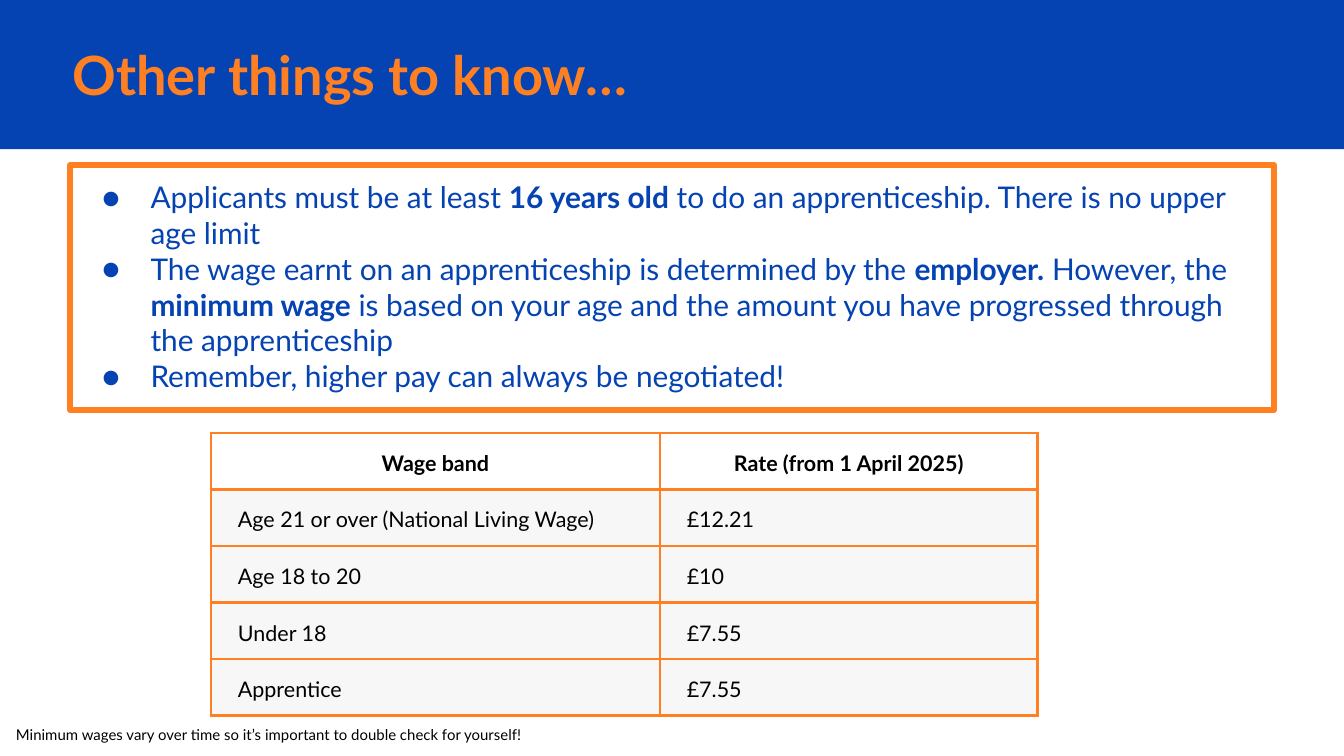
"""Build a slide on apprenticeship age limits and minimum wages."""
import pptx
import pptx.util
import pptx.dml.color
import pptx.enum.shapes
import pptx.enum.text
import pptx.oxml
import pptx.oxml.ns

Inches, Pt = pptx.util.Inches, pptx.util.Pt
ALIGN = pptx.enum.text.PP_ALIGN
ANCHOR = pptx.enum.text.MSO_ANCHOR

FONT = "Lato"
COLORS = {"blue": "0543B3", "orange": "FF8022", "black": "000000", "grey": "F7F7F7"}

TITLE = "Other things to know…"
POINTS = [
    "Applicants must be at least **16 years old** to do an apprenticeship. "
    "There is no upper age limit",
    "The wage earnt on an apprenticeship is determined by the **employer.** However, "
    "the **minimum wage** is based on your age and the amount you have progressed "
    "through the apprenticeship",
    "Remember, higher pay can always be negotiated!",
]
RATES = [
    ("Wage band", "Rate (from 1 April 2025)"),
    ("Age 21 or over (National Living Wage)", "£12.21"),
    ("Age 18 to 20", "£10"),
    ("Under 18", "£7.55"),
    ("Apprentice", "£7.55"),
]
NOTE = "Minimum wages vary over time so it’s important to double check for yourself!"
WIDTHS = (3.34, 2.81)
ROW = 0.42


def color(name):
    return pptx.dml.color.RGBColor.from_string(COLORS[name])


def box(left, top, width, height):
    return [Inches(n) for n in (left, top, width, height)]


def place(shape, *area):
    shape.left, shape.top, shape.width, shape.height = box(*area)


def add_xml(parent, tag, attrs="", inner=""):
    ns = pptx.oxml.ns.nsdecls("a")
    parent.append(pptx.oxml.parse_xml(f"<a:{tag} {ns} {attrs}>{inner}</a:{tag}>"))


def paint(name):
    return f'<a:srgbClr val="{COLORS[name]}"/>'


def write(frame, lines, size=16, tint="black", bold=False, align=ALIGN.LEFT,
          space=1.0, bullet=None):
    for i, line in enumerate(lines):
        para = frame.add_paragraph() if i else frame.paragraphs[0]
        para.alignment, para.line_spacing = align, space
        para.space_before = para.space_after = Pt(0)
        for j, part in enumerate(line.split("**")):
            run = para.add_run()
            run.text = part
            run.font.name, run.font.size = FONT, Pt(size)
            run.font.bold = bold or j % 2 == 1
            run.font.color.rgb = color(tint)
        if bullet:
            props = para._p.get_or_add_pPr()
            props.set("marL", str(Inches(0.5)))
            props.set("indent", str(Inches(-0.36)))
            add_xml(props, "buClr", inner=paint(tint))
            add_xml(props, "buFont", f'typeface="{FONT}"')
            add_xml(props, "buChar", f'char="{bullet}"')


def pad(frame, anchor=ANCHOR.TOP):
    frame.word_wrap, frame.vertical_anchor = True, anchor
    frame.auto_size = pptx.enum.text.MSO_AUTO_SIZE.NONE
    frame.margin_left = frame.margin_right = Inches(0.1)
    frame.margin_top = frame.margin_bottom = Inches(0.1)


def border(cell):
    props = cell._tc.get_or_add_tcPr()
    for side in "LRTB":
        add_xml(props, f"ln{side}", f'w="{Pt(1.5)}"',
                f'<a:solidFill>{paint("orange")}</a:solidFill>')


def fill_table(table):
    for col, width in zip(table.columns, WIDTHS):
        col.width = Inches(width)
    for r, row in enumerate(RATES):
        table.rows[r].height = Inches(ROW)
        for c, text in enumerate(row):
            cell = table.cell(r, c)
            cell.vertical_anchor = ANCHOR.MIDDLE
            cell.margin_left = cell.margin_right = Inches(0.2)
            cell.margin_top = cell.margin_bottom = Inches(0.1)
            border(cell)
            if r:
                cell.fill.solid()
                cell.fill.fore_color.rgb = color("grey")
            else:
                cell.fill.background()
            write(cell.text_frame, [text], size=11.5, bold=r == 0, space=1.15,
                  align=ALIGN.LEFT if r else ALIGN.CENTER)


def main():
    deck = pptx.Presentation()
    deck.slide_width = Inches(10)
    deck.slide_height = deck.slide_width * 9 // 16
    slide = deck.slides.add_slide(deck.slide_layouts[1])
    shapes = slide.shapes

    band = shapes.add_shape(pptx.enum.shapes.MSO_SHAPE.RECTANGLE, *box(0, 0, 10, 1.11))
    band.shadow.inherit = False
    band.fill.solid()
    band.fill.fore_color.rgb = color("blue")
    band.line.fill.background()
    shapes._spTree.insert(2, band._element)

    title = shapes.title
    place(title, 0.44, 0.21, 9.35, 0.68)
    pad(title.text_frame, ANCHOR.MIDDLE)
    write(title.text_frame, [TITLE], size=29, tint="orange", bold=True)

    body = slide.placeholders[1]
    place(body, 0.52, 1.23, 8.96, 1.82)
    body.line.color.rgb, body.line.width = color("orange"), Pt(3)
    pad(body.text_frame)
    write(body.text_frame, POINTS, tint="blue", bullet="●")

    note = shapes.add_textbox(*box(0.02, 5.3, 9.95, 0.34))
    pad(note.text_frame)
    write(note.text_frame, [NOTE], size=8)

    area = box(1.57, 3.22, sum(WIDTHS), ROW * len(RATES))
    fill_table(shapes.add_table(len(RATES), len(WIDTHS), *area).table)
    deck.save("out.pptx")


if __name__ == "__main__":
    main()
